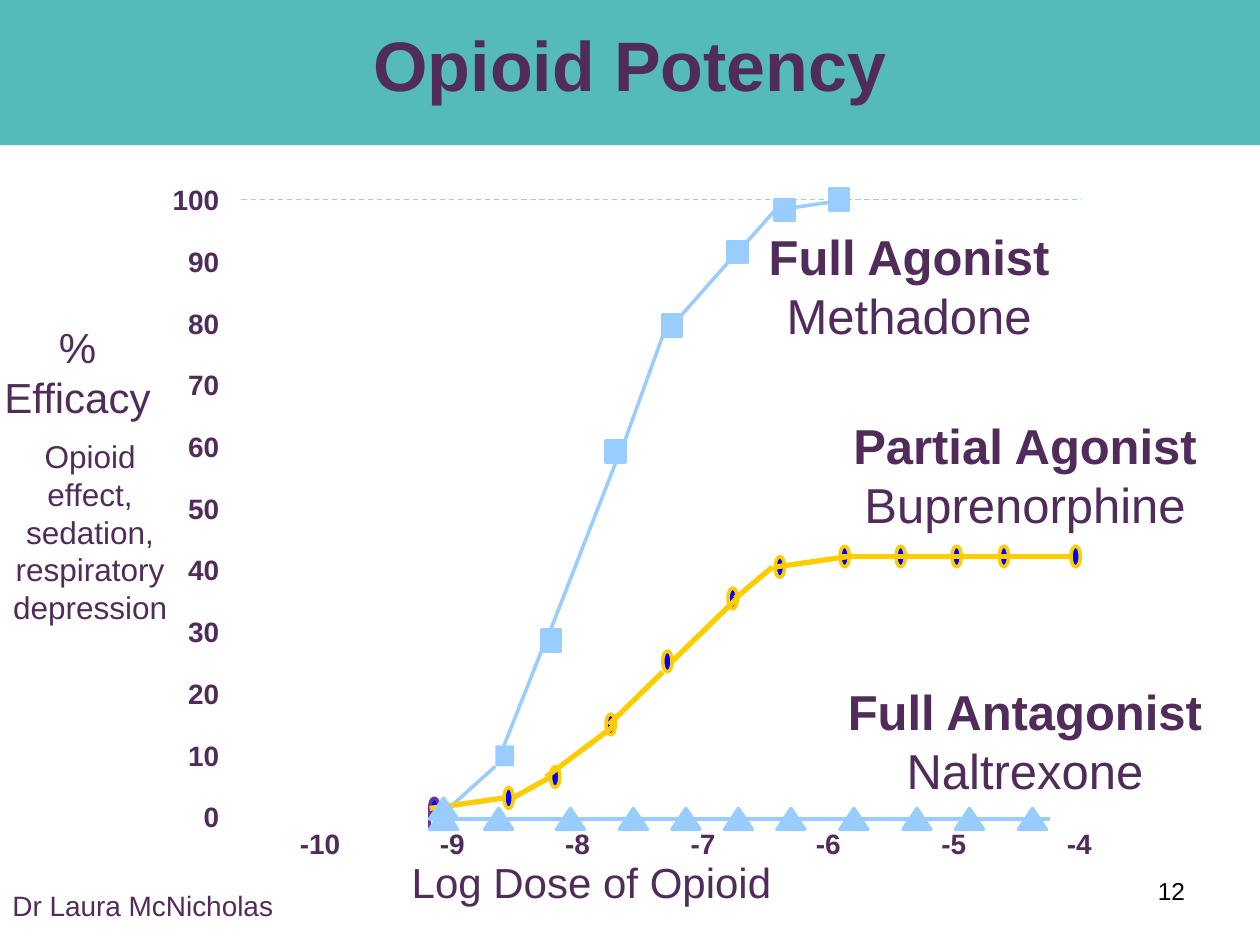
from lxml import etree
from pptx import Presentation
from pptx.dml.color import RGBColor
from pptx.enum.dml import MSO_LINE
from pptx.enum.shapes import MSO_CONNECTOR, MSO_SHAPE
from pptx.enum.text import PP_ALIGN
from pptx.oxml.ns import qn
from pptx.util import Pt

LEFT, CENTER, RIGHT = PP_ALIGN.LEFT, PP_ALIGN.CENTER, PP_ALIGN.RIGHT
RECTANGLE, OVAL, TRIANGLE = MSO_SHAPE.RECTANGLE, MSO_SHAPE.OVAL, MSO_SHAPE.ISOSCELES_TRIANGLE
STRAIGHT, DASH = MSO_CONNECTOR.STRAIGHT, MSO_LINE.DASH

THEME = {
    "font": "Arial",
    "teal": RGBColor(0x54, 0xBA, 0xBA),
    "plum": RGBColor(0x51, 0x2C, 0x5A),
    "sky": RGBColor(0x99, 0xCC, 0xFF),
    "gold": RGBColor(0xFF, 0xCC, 0x00),
    "blue": RGBColor(0x00, 0x00, 0xFF),
    "purple": RGBColor(0x70, 0x30, 0xA0),
    "white": RGBColor(0xFF, 0xFF, 0xFF),
    "black": RGBColor(0x00, 0x00, 0x00),
    "title": 40, "drug": 28, "axis": 24, "note": 18, "tick": 16, "number": 14,
}

presentation = Presentation()
presentation.slide_width, presentation.slide_height = Pt(720), Pt(540)
slide = presentation.slides.add_slide(presentation.slide_layouts[6])


def add_shape(kind, left, top, width, height, fill, line=None):
    shape = slide.shapes.add_shape(kind, Pt(left), Pt(top), Pt(width), Pt(height))
    shape.shadow.inherit = False
    shape.fill.solid()
    shape.fill.fore_color.rgb = THEME[fill]
    if line:
        shape.line.color.rgb = THEME[line]
        shape.line.width = Pt(2)
    else:
        shape.line.fill.background()


def add_line(x1, y1, x2, y2, color, width):
    connector = slide.shapes.add_connector(STRAIGHT, Pt(x1), Pt(y1), Pt(x2), Pt(y2))
    connector.line.color.rgb = THEME[color]
    connector.line.width = Pt(width)
    etree.SubElement(connector._element.spPr, qn("a:effectLst"))
    return connector


add_shape(RECTANGLE, 0, 0, 720, 83, "teal")

add_shape(RECTANGLE, 245.5, 462, 10.8, 12, "white", "purple")
add_shape(RECTANGLE, 283, 426, 10.8, 12, "sky")
agonist_markers = [(309.6, 360), (346.3, 252), (378.7, 180), (416, 138), (443, 114), (474, 108)]
for left, top in agonist_markers:
    add_shape(RECTANGLE, left, top, 10.8, 12, "sky", "sky")
agonist_segments = [
    (256.3, 462, 283, 438), (288, 426, 311.8, 366), (314.6, 360, 352, 264),
    (357, 252, 378.7, 192), (389.5, 180, 416, 150), (427, 138, 443, 120),
    (444, 120, 485, 114),
]
for segment in agonist_segments:
    add_line(*segment, "sky", 2)

add_shape(OVAL, 245.5, 456, 5.3, 12, "blue", "purple")
partial_markers = [
    (288, 450), (314.6, 438), (346.3, 408), (378.7, 372), (416, 336),
    (443, 318), (480, 312), (512, 312), (544, 312), (571, 312),
]
for left, top in partial_markers:
    add_shape(OVAL, left, top, 5.3, 12, "blue", "gold")
partial_segments = [
    (245.5, 462, 288, 456), (293, 456, 314.6, 444), (312, 444, 352, 414),
    (348, 414, 378.7, 384), (384, 378, 421, 342), (420, 342, 441.4, 324),
    (443, 324, 485, 318), (480, 318, 533.5, 318), (528, 318, 581, 318),
    (576, 318, 612, 318),
]
for segment in partial_segments:
    add_line(*segment, "gold", 3)
add_shape(OVAL, 612, 312, 5.3, 12, "blue", "gold")

add_shape(TRIANGLE, 245.5, 456, 16, 12, "sky", "sky")
for left in [245.5, 277, 318, 354, 384, 414, 444, 480, 516, 546, 582]:
    add_shape(TRIANGLE, left, 462, 16, 12, "sky", "sky")
add_line(252, 468, 600, 468, "sky", 2)
add_line(138, 114, 618, 114, "sky", 0.75).line.dash_style = DASH

efficacy_ticks = [str(value) for value in range(100, -1, -10)]
dose_ticks = "\t".join(str(value) for value in range(-10, -3))
dose_tabs = [80 + 71.66 * index for index in range(6)]

texts = [
    (["Opioid Potency"], (0, 8.6, 720, 55.4), "title", CENTER, True, "all"),
    (efficacy_ticks, (91.4, 103, 41, 372), "tick", RIGHT, False, "all"),
    ([dose_ticks], (164.2, 468.7, 478.8, 26.6), "tick", LEFT, False, "all"),
    (["%", "Efficacy"], (-5, 180, 98.6, 65.5), "axis", CENTER, False, "none"),
    (["Opioid effect, sedation, respiratory depression"],
     (0, 246.2, 103, 115.2), "note", CENTER, True, "none"),
    (["Log Dose of Opioid"], (228.2, 486, 222.5, 36), "axis", LEFT, False, "none"),
    (["Full Agonist", "Methadone"], (431.3, 126, 176.4, 74.2), "drug", CENTER, False, "first"),
    (["Partial Agonist", "Buprenorphine"], (479.5, 234, 212.4, 74.2), "drug", CENTER, False, "first"),
    (["Full Antagonist", "Naltrexone"], (476.6, 386, 218.2, 74.2), "drug", CENTER, False, "first"),
    (["Dr Laura McNicholas"], (0, 504, 188.6, 26.6), "tick", LEFT, True, "none"),
    (["12"], (654.5, 496.8, 39.6, 24.5), "number", LEFT, True, "none"),
]
for lines, bounds, size, alignment, wrap, bold in texts:
    text_frame = slide.shapes.add_textbox(*[Pt(value) for value in bounds]).text_frame
    text_frame.word_wrap = wrap
    for index, line in enumerate(lines):
        paragraph = text_frame.paragraphs[0] if index == 0 else text_frame.add_paragraph()
        paragraph.alignment = alignment
        if lines is efficacy_ticks:
            paragraph.line_spacing = 0.9
            if index:
                paragraph.space_before = Pt(18)
        if "\t" in line:
            tab_list = etree.SubElement(paragraph._p.get_or_add_pPr(), qn("a:tabLst"))
            for position in dose_tabs:
                etree.SubElement(tab_list, qn("a:tab"), pos=str(Pt(position)), algn="l")
        run = paragraph.add_run()
        run.text = line
        run.font.name = THEME["font"]
        run.font.size = Pt(THEME[size])
        run.font.bold = bold == "all" or (bold == "first" and index == 0)
        run.font.color.rgb = THEME["black" if size == "number" else "plum"]

presentation.save("out.pptx")
